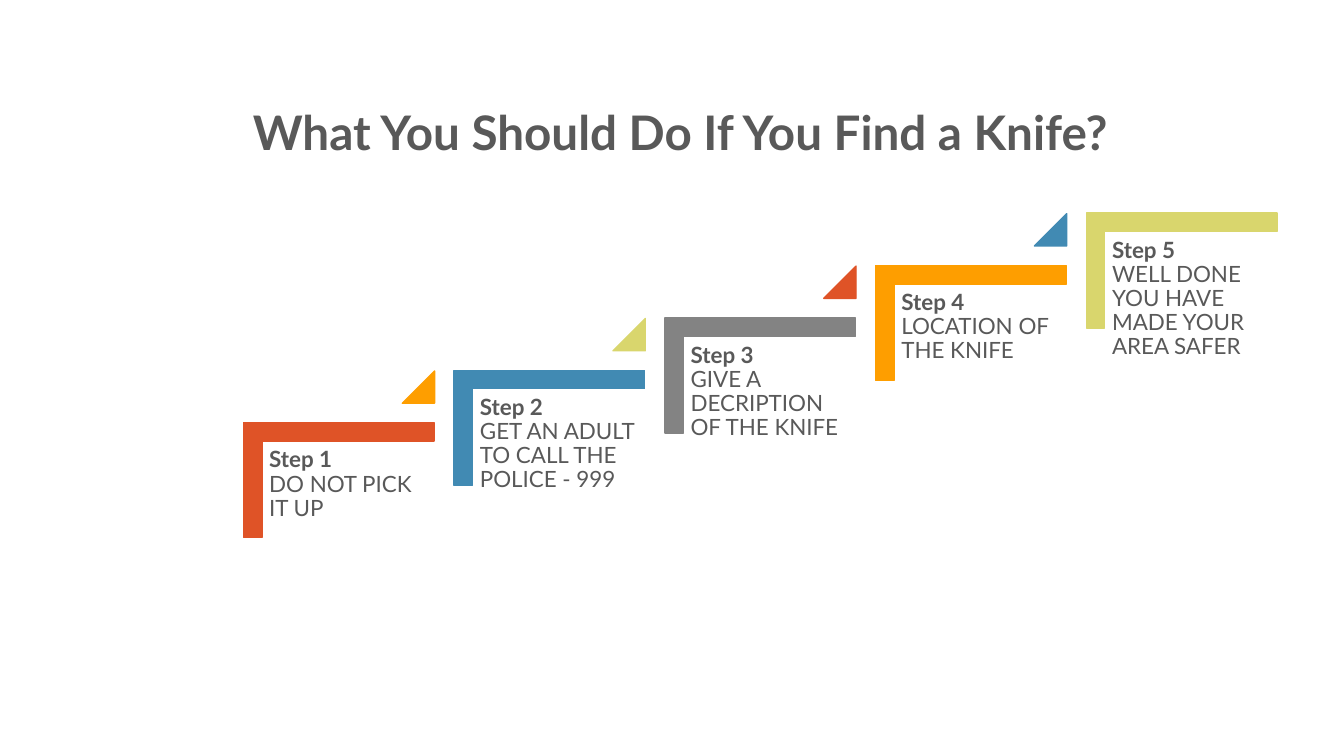
from dataclasses import dataclass

import pptx
import pptx.dml.color
import pptx.enum.shapes
import pptx.enum.text
import pptx.shapes.autoshape
import pptx.shapes.shapetree
import pptx.text.text
import pptx.util

Inches = pptx.util.Inches
Shape = pptx.enum.shapes.MSO_SHAPE


@dataclass(frozen=True)
class Theme:
    font: str = "Lato"
    text: str = "595959"
    red: str = "DF5327"
    blue: str = "418AB3"
    grey: str = "838383"
    orange: str = "FE9E00"
    lime: str = "D9D66D"
    title_pt: int = 34
    step_pt: int = 16
    line_pt: int = 1
    line_spacing: float = 0.9


@dataclass(frozen=True)
class Step:
    action: str
    color: str
    arrow_color: str | None = None


THEME = Theme()
STEPS = [
    Step("DO NOT PICK IT UP", THEME.red, THEME.orange),
    Step("GET AN ADULT TO CALL THE POLICE - 999", THEME.blue, THEME.lime),
    Step("GIVE A DECRIPTION OF THE KNIFE", THEME.grey, THEME.red),
    Step("LOCATION OF THE KNIFE", THEME.orange, THEME.blue),
    Step("WELL DONE YOU HAVE MADE YOUR AREA SAFER", THEME.lime),
]
FIRST_LEFT, FIRST_TOP = 2.79, 3.82
STEP_RUN, STEP_RISE = 2.09, 0.52


def rgb(color: str) -> pptx.dml.color.RGBColor:
    return pptx.dml.color.RGBColor.from_string(color)


def paint(sp: pptx.shapes.autoshape.Shape, color: str) -> None:
    sp.shadow.inherit = False
    sp.fill.solid()
    sp.fill.fore_color.rgb = rgb(color)
    sp.line.color.rgb = rgb(color)
    sp.line.width = pptx.util.Pt(THEME.line_pt)


def style_paragraph(p: pptx.text.text._Paragraph, size: int) -> None:
    """Format every run alike, with only the first one bold."""
    p.line_spacing = THEME.line_spacing
    for i, r in enumerate(p.runs):
        r.font.name = THEME.font
        r.font.size = pptx.util.Pt(size)
        r.font.bold = i == 0
        r.font.color.rgb = rgb(THEME.text)


def add_title(shapes: pptx.shapes.shapetree.SlideShapes, text: str) -> None:
    sp = shapes.add_textbox(Inches(2.41), Inches(0.33), Inches(10.25), Inches(1.31))
    tf = sp.text_frame
    tf.word_wrap = True
    tf.vertical_anchor = pptx.enum.text.MSO_ANCHOR.BOTTOM
    tf.text = text
    style_paragraph(tf.paragraphs[0], THEME.title_pt)


def add_step(shapes: pptx.shapes.shapetree.GroupShapes, index: int, step: Step) -> None:
    left = FIRST_LEFT + index * STEP_RUN
    top = FIRST_TOP - index * STEP_RISE

    corner = shapes.add_shape(
        Shape.CORNER, Inches(left), Inches(top), Inches(1.14), Inches(1.89))
    corner.rotation = 90
    corner.adjustments[0] = corner.adjustments[1] = 0.16
    paint(corner, step.color)

    label = shapes.add_textbox(
        Inches(left - 0.19), Inches(top + 0.56), Inches(1.71), Inches(1.5))
    tf = label.text_frame
    tf.word_wrap = True
    tf.margin_left = tf.margin_right = tf.margin_top = tf.margin_bottom = Inches(0.07)
    p = tf.paragraphs[0]
    p.text = f"Step {index + 1}\v{step.action}"
    style_paragraph(p, THEME.step_pt)

    if step.arrow_color:
        arrow = shapes.add_shape(
            Shape.ISOSCELES_TRIANGLE,
            Inches(left + 1.2), Inches(top - 0.14), Inches(0.32), Inches(0.32))
        arrow.adjustments[0] = 1
        paint(arrow, step.arrow_color)


def main() -> None:
    prs = pptx.Presentation()
    prs.slide_width, prs.slide_height = Inches(13.33), Inches(7.5)
    s = prs.slides.add_slide(prs.slide_layouts[6])
    add_title(s.shapes, "What You Should Do If You Find a Knife?")
    staircase = s.shapes.add_group_shape()
    for index, step in enumerate(STEPS):
        add_step(staircase.shapes, index, step)
    prs.save("out.pptx")


if __name__ == "__main__":
    main()
